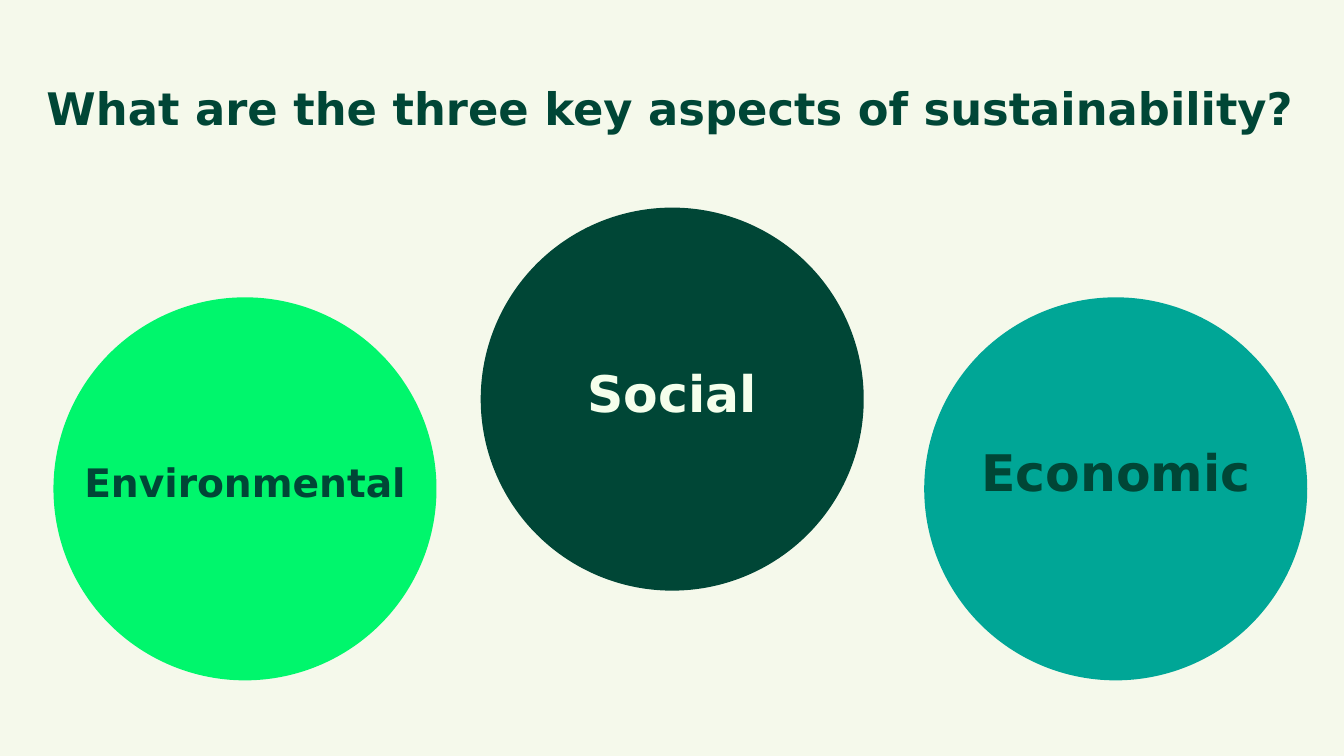
from dataclasses import dataclass

import pptx
import pptx.dml.color
import pptx.enum.shapes
import pptx.enum.text
import pptx.util

Pt = pptx.util.Pt
Rgb = pptx.dml.color.RGBColor.from_string
Align = pptx.enum.text.PP_ALIGN
Anchor = pptx.enum.text.MSO_ANCHOR


@dataclass(frozen=True)
class Theme:
    """Colours, type sizes and font of the slide."""
    cream: str = "F5F9EB"
    pale: str = "F5FFEC"
    forest: str = "004636"
    lime: str = "00F66C"
    teal: str = "00A696"
    font: str = "DejaVu Sans"
    title: int = 32
    large: int = 36
    medium: int = 28


THEME = Theme()


def write(holder, wording, size, colour, anchor, paragraph_format):
    """Put one bold line of text into a title or text box."""
    frame = holder.text_frame
    frame.text = wording
    frame.word_wrap = True
    frame.auto_size = pptx.enum.text.MSO_AUTO_SIZE.NONE
    frame.vertical_anchor = anchor
    line = frame.paragraphs[0]
    for name, value in paragraph_format.items():
        setattr(line, name, value)
    font = line.runs[0].font
    for name, value in {"name": THEME.font, "size": Pt(size), "bold": True}.items():
        setattr(font, name, value)
    font.color.rgb = Rgb(colour)


def place_title(slide, wording, box):
    """Fit the title placeholder to its box and fill it."""
    title = slide.shapes.title
    for name, value in zip(("left", "top", "width", "height"), box):
        setattr(title, name, Pt(value))
    write(title, wording, THEME.title, THEME.forest, Anchor.MIDDLE,
          {"alignment": Align.LEFT, "line_spacing": 0.9})


def place_aspect(slide, box, fill, wording, size, colour, label_width, rise):
    """Draw an aspect's circle and its label, set a little above the centre."""
    left, top, diameter = box
    circle = slide.shapes.add_shape(
        pptx.enum.shapes.MSO_SHAPE.OVAL, Pt(left), Pt(top), Pt(diameter), Pt(diameter))
    circle.shadow.inherit = False
    circle.fill.solid()
    circle.fill.fore_color.rgb = Rgb(fill)
    circle.line.fill.background()

    label_height = size * 1.2 + 8
    label = slide.shapes.add_textbox(
        Pt(left + (diameter - label_width) / 2),
        Pt(top + (diameter - label_height) / 2 - rise),
        Pt(label_width), Pt(label_height))
    write(label, wording, size, colour, Anchor.TOP, {"alignment": Align.CENTER})


def build_aspects_slide(deck):
    """Lay out the question above its three circles."""
    slide = deck.slides.add_slide(deck.slide_layouts[5])
    slide.background.fill.solid()
    slide.background.fill.fore_color.rgb = Rgb(THEME.cream)
    place_title(slide, "What are the three key aspects of sustainability?",
                (26, 27.4, 908, 104.4))

    diameter, low, high = 273.6, 212.4, 148.3
    aspects = (
        (38.2, low, THEME.lime, "Environmental", THEME.medium, THEME.forest, 255, 4.7),
        (660.2, low, THEME.teal, "Economic", THEME.large, THEME.forest, 212.4, 11.9),
        (343.4, high, THEME.forest, "Social", THEME.large, THEME.pale, 187.2, 4.7),
    )
    for left, top, *look in aspects:
        place_aspect(slide, (left, top, diameter), *look)


def main():
    """Build and save the deck."""
    deck = pptx.Presentation()
    deck.slide_width, deck.slide_height = Pt(960), Pt(540)
    build_aspects_slide(deck)
    deck.save("out.pptx")


if __name__ == "__main__":
    main()
